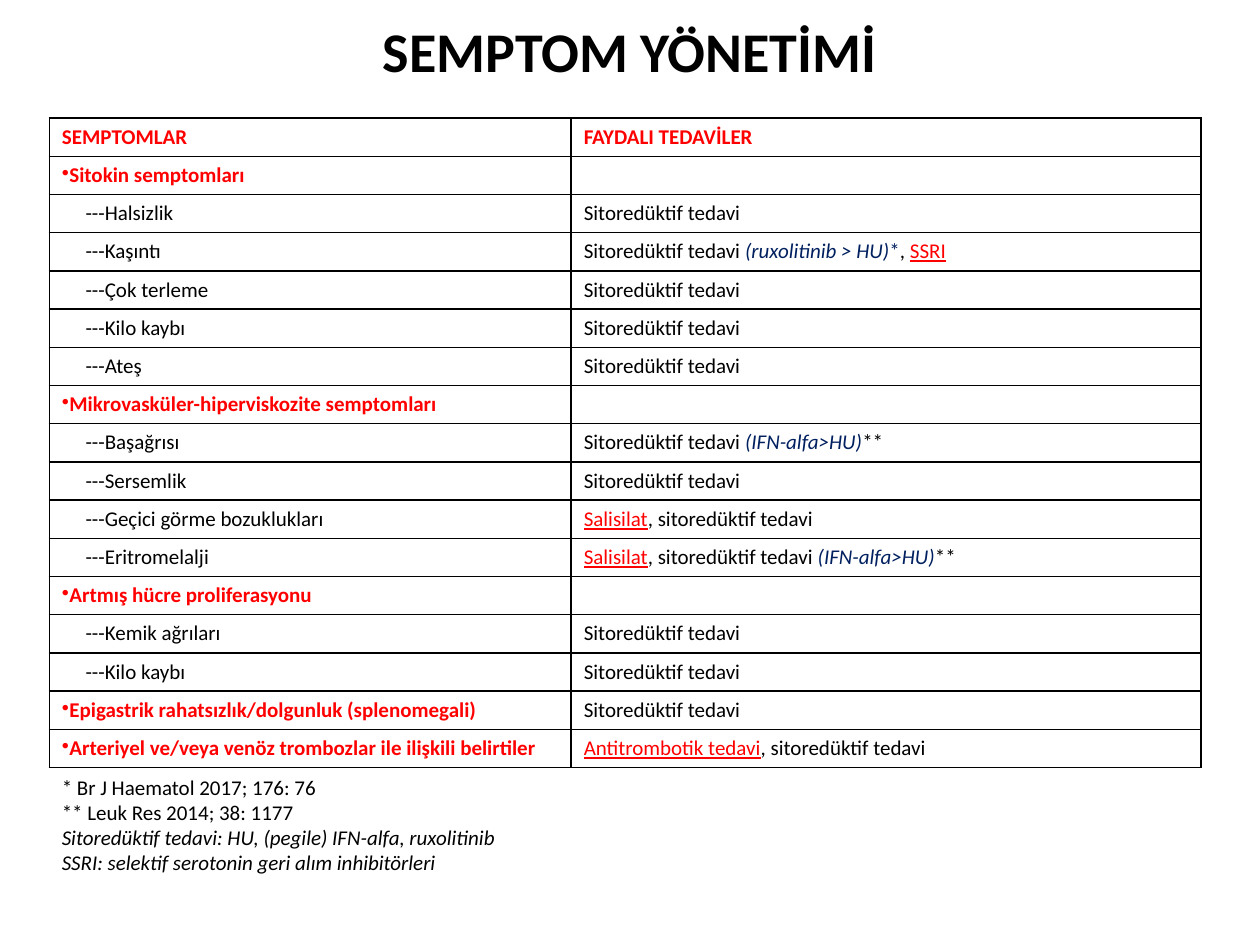
from lxml import etree
from pptx import Presentation
from pptx.dml.color import RGBColor
from pptx.enum.text import MSO_ANCHOR, PP_ALIGN
from pptx.oxml.ns import qn
from pptx.util import Pt

BLACK = RGBColor(0, 0, 0)
RED = RGBColor(0xFF, 0, 0)
NAVY = RGBColor(0, 0x20, 0x60)
CENTER, MIDDLE = PP_ALIGN.CENTER, MSO_ANCHOR.MIDDLE

FORMATS = {
    "plain": {},
    "title": {"size": Pt(32), "bold": True},
    "group": {"color": RED, "bold": True},
    "drug": {"color": RED, "underline": True},
    "compare": {"color": NAVY, "italic": True},
    "navy": {"color": NAVY},
    "italic": {"italic": True},
}

TITLE = "SEMPTOM YÖNETİMİ"
HEADER = ("SEMPTOMLAR", "FAYDALI TEDAVİLER")
CYTO = [("Sitoredüktif tedavi", "plain")]
CYTO_IFN = [("Sitoredüktif tedavi ", "plain"), ("(IFN-alfa>HU)", "compare"), ("**", "plain")]
# Each group: heading, its treatment, then (symptom, treatment) pairs
GROUPS = [
    ("Sitokin semptomları", [], [
        ("Halsizlik", CYTO),
        ("Kaşıntı", [("Sitoredüktif tedavi ", "plain"), ("(ruxolitinib > HU)", "compare"),
                     ("*", "navy"), (", ", "plain"), ("SSRI", "drug")]),
        ("Çok terleme", CYTO),
        ("Kilo kaybı", CYTO),
        ("Ateş", CYTO),
    ]),
    ("Mikrovasküler-hiperviskozite semptomları", [], [
        ("Başağrısı", CYTO_IFN),
        ("Sersemlik", CYTO),
        ("Geçici görme bozuklukları", [("Salisilat", "drug"), (", sitoredüktif tedavi", "plain")]),
        ("Eritromelalji", [("Salisilat", "drug"), (", sitoredüktif tedavi ", "plain"),
                           *CYTO_IFN[1:]]),
    ]),
    ("Artmış hücre proliferasyonu", [], [
        ("Kemik ağrıları", CYTO),
        ("Kilo kaybı", CYTO),
    ]),
    ("Epigastrik rahatsızlık/dolgunluk (splenomegali)", CYTO, []),
    ("Arteriyel ve/veya venöz trombozlar ile ilişkili belirtiler",
     [("Antitrombotik tedavi", "drug"), (", sitoredüktif tedavi", "plain")], []),
]
NOTES = [
    ("* Br J Haematol 2017; 176: 76", "plain"),
    ("** Leuk Res 2014; 38: 1177", "plain"),
    ("Sitoredüktif tedavi: HU, (pegile) IFN-alfa, ruxolitinib", "italic"),
    ("SSRI: selektif serotonin geri alım inhibitörleri", "italic"),
]

LEFT, TOP, ROW_H = 28.2, 67.5, 21.84
COL_W = (298.2, 360)
INDENT = 13.5


def add_runs(p, runs):
    for text, name in runs:
        r = p.add_run()
        r.text = text
        style = {"name": "Calibri", "size": Pt(12), "bold": False, "color": BLACK, **FORMATS[name]}
        r.font.color.rgb = style.pop("color")
        for key, value in style.items():
            setattr(r.font, key, value)
    if not runs:  # keeps an empty row as low as the others
        etree.SubElement(p._p, qn("a:endParaRPr"), sz="1200")


def set_margin(p, left, bullet=None):
    pPr = p._p.get_or_add_pPr()
    pPr.set("marL", str(Pt(left)))
    pPr.set("indent", "0")
    if bullet:
        etree.SubElement(pPr, qn("a:buChar"), char=bullet)


def set_borders(cell):
    tcPr = cell._tc.get_or_add_tcPr()
    for i, side in enumerate(("lnL", "lnR", "lnT", "lnB")):
        ln = etree.Element(qn("a:" + side), w=str(Pt(1)))
        fill = etree.SubElement(ln, qn("a:solidFill"))
        etree.SubElement(fill, qn("a:srgbClr"), val=str(BLACK))
        tcPr.insert(i, ln)


def add_text(s, box, lines, align=None, anchor=None, wrap=True):
    tf = s.shapes.add_textbox(*map(Pt, box)).text_frame
    tf.word_wrap = wrap
    tf.vertical_anchor = anchor
    for i, line in enumerate(lines):
        p = tf.add_paragraph() if i else tf.paragraphs[0]
        p.alignment = align
        add_runs(p, [line])


def add_symptom_table(s):
    rows = [([(HEADER[0], "group")], [(HEADER[1], "group")], 0, None)]
    for heading, treatment, symptoms in GROUPS:
        rows.append(([(heading, "group")], treatment, 0, "•"))
        rows += [([("---" + name, "plain")], cure, INDENT, None) for name, cure in symptoms]
    height = len(rows) * ROW_H
    table = s.shapes.add_table(len(rows), 2, Pt(LEFT), Pt(TOP), Pt(sum(COL_W)), Pt(height)).table
    table.first_row = table.horz_banding = False
    for col, width in zip(table.columns, COL_W):
        col.width = Pt(width)
    for row, (symptom, treatment, left, bullet) in zip(table.rows, rows):
        row.height = Pt(ROW_H)
        for cell, runs in zip(row.cells, (symptom, treatment)):
            cell.fill.background()
            set_borders(cell)
            add_runs(cell.text_frame.paragraphs[0], runs)
        set_margin(row.cells[0].text_frame.paragraphs[0], left, bullet)
    return TOP + height


def main():
    prs = Presentation()
    prs.slide_width, prs.slide_height = Pt(720), Pt(540)
    s = prs.slides.add_slide(prs.slide_layouts[6])
    add_text(s, (36, 6, 648, 45), [(TITLE, "title")], CENTER, MIDDLE)
    bottom = add_symptom_table(s)
    add_text(s, (LEFT, bottom, 264, 65.5), NOTES, wrap=False)
    prs.save("out.pptx")


if __name__ == "__main__":
    main()
